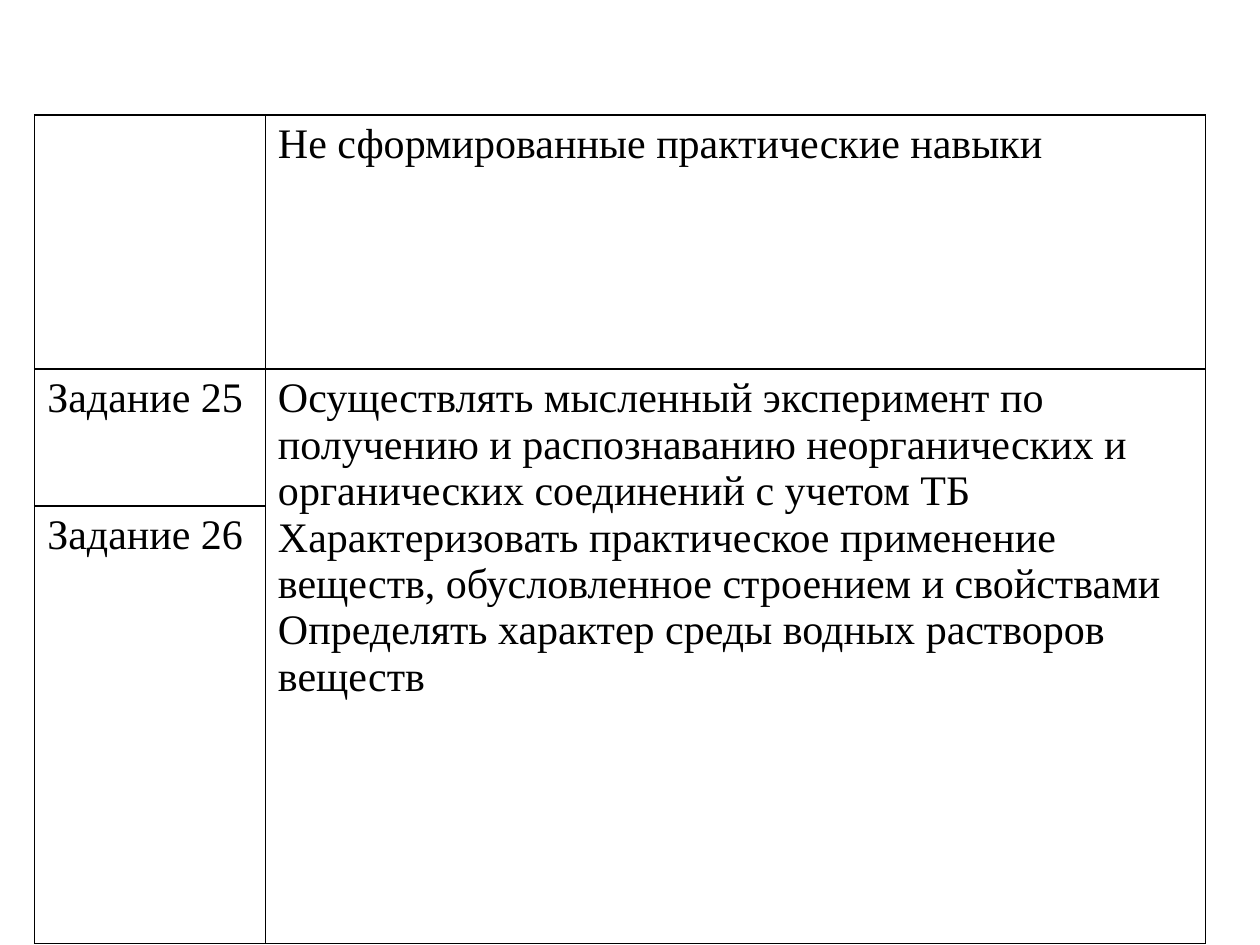
"""Build a slide with a table of chemistry tasks and the skills they need."""
from lxml import etree
from pptx import Presentation
from pptx import util as u
from pptx.dml.color import RGBColor
from pptx.oxml import ns

BLACK = RGBColor(0x00, 0x00, 0x00)
WHITE = RGBColor(0xFF, 0xFF, 0xFF)
FONT = "Times New Roman"
COLUMN_WIDTHS = [4.65, 18.95]
ROW_HEIGHTS = [5.12, 2.76, 8.82]
CONTENT = [
    [[], ["Не сформированные практические навыки"]],
    [["Задание 25"], [
        "Осуществлять мысленный эксперимент по получению и распознаванию "
        "неорганических и органических соединений с учетом ТБ",
        "Характеризовать практическое применение веществ, "
        "обусловленное строением и свойствами",
        "Определять характер среды водных растворов веществ",
    ]],
    [["Задание 26"], []],
]


def add_borders(cell):
    properties = cell._tc.get_or_add_tcPr()
    for side in ("lnL", "lnR", "lnT", "lnB"):
        line = etree.SubElement(properties, ns.qn(f"a:{side}"), w=str(u.Pt(1)))
        fill = etree.SubElement(line, ns.qn("a:solidFill"))
        etree.SubElement(fill, ns.qn("a:srgbClr"), val=str(BLACK))


deck = Presentation()
deck.slide_width, deck.slide_height = u.Cm(25.4), u.Cm(19.05)
page = deck.slides.add_slide(deck.slide_layouts[6])

frame = page.shapes.add_table(
    len(ROW_HEIGHTS), len(COLUMN_WIDTHS), u.Cm(0.7), u.Cm(2.32),
    u.Cm(sum(COLUMN_WIDTHS)), u.Cm(sum(ROW_HEIGHTS)))
table = frame.table
table.first_row = False
table.horz_banding = False
for column, width in zip(table.columns, COLUMN_WIDTHS):
    column.width = u.Cm(width)
for row, height in zip(table.rows, ROW_HEIGHTS):
    row.height = u.Cm(height)
table.cell(1, 1).merge(table.cell(2, 1))

for row, entries in zip(table.rows, CONTENT):
    for cell, lines in zip(row.cells, entries):
        add_borders(cell)
        cell.fill.solid()
        cell.fill.fore_color.rgb = WHITE
        for index, line in enumerate(lines):
            body = cell.text_frame
            para = body.add_paragraph() if index else body.paragraphs[0]
            span = para.add_run()
            span.text = line
            span.font.name = FONT
            span.font.size = u.Pt(24)
            span.font.color.rgb = BLACK

deck.save("out.pptx")
